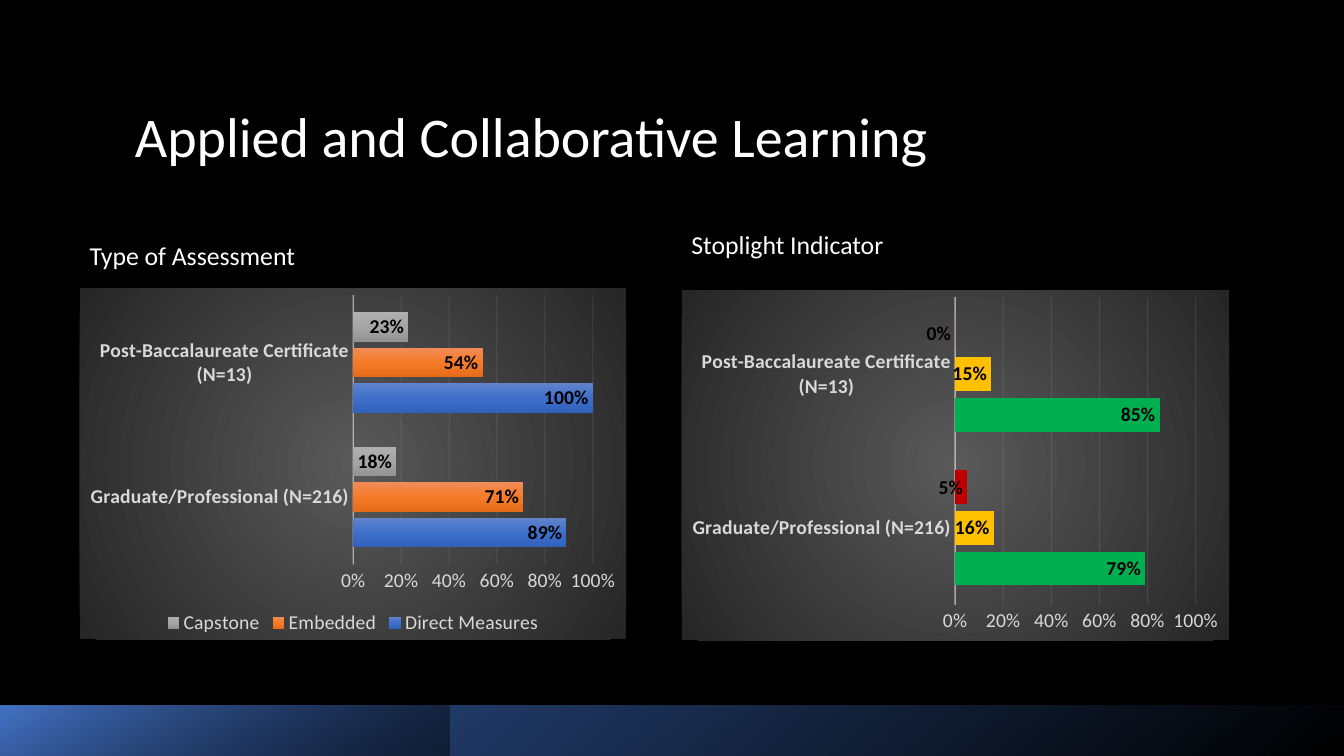
from pptx import Presentation
from pptx.chart.data import CategoryChartData
from pptx.dml.color import RGBColor
from pptx.enum.chart import XL_CHART_TYPE, XL_LABEL_POSITION, XL_LEGEND_POSITION, XL_TICK_MARK
from pptx.enum.shapes import MSO_SHAPE
from pptx.enum.text import MSO_ANCHOR
from pptx.oxml import parse_xml
from pptx.oxml.ns import nsdecls, qn
from pptx.util import Inches, Pt

BAR = XL_CHART_TYPE.BAR_CLUSTERED
INSIDE_END = XL_LABEL_POSITION.INSIDE_END
BOTTOM = XL_LEGEND_POSITION.BOTTOM
NO_TICK = XL_TICK_MARK.NONE
RECT = MSO_SHAPE.RECTANGLE
TOP, MIDDLE = MSO_ANCHOR.TOP, MSO_ANCHOR.MIDDLE

BLACK = RGBColor(0x00, 0x00, 0x00)
WHITE = RGBColor(0xFF, 0xFF, 0xFF)
NAVY = RGBColor(0x2F, 0x55, 0x97)
BLUE = RGBColor(0x44, 0x72, 0xC4)
LABEL_GRAY = RGBColor(0xD9, 0xD9, 0xD9)
LINE_GRAY = RGBColor(0xF2, 0xF2, 0xF2)
PANEL_CENTER = RGBColor(0x59, 0x59, 0x59)
PANEL_EDGE = RGBColor(0x26, 0x26, 0x26)
BLUES = [RGBColor(0x61, 0x83, 0xCB), RGBColor(0x3E, 0x70, 0xCA), RGBColor(0x30, 0x62, 0xBB)]
ORANGES = [RGBColor(0xF1, 0x8C, 0x57), RGBColor(0xF6, 0x7B, 0x28), RGBColor(0xE5, 0x6C, 0x19)]
GRAYS = [RGBColor(0xAF, 0xAF, 0xAF), RGBColor(0xA5, 0xA5, 0xA5), RGBColor(0x93, 0x93, 0x93)]
GREEN = RGBColor(0x00, 0xB0, 0x50)
AMBER = RGBColor(0xFF, 0xC0, 0x00)
RED = RGBColor(0xC0, 0x00, 0x00)
FONT = "Calibri"


def gradient(stops, angle=None):
    """Gradient fill from (position, colour, opacity) stops; radial without an angle."""
    gs = "".join(
        f'<a:gs pos="{pos * 1000}"><a:srgbClr val="{color}">'
        f'<a:alpha val="{opacity * 1000}"/></a:srgbClr></a:gs>'
        for pos, color, opacity in stops)
    if angle is None:
        shade = ('<a:path path="circle"><a:fillToRect l="50000" t="50000" '
                 'r="50000" b="50000"/></a:path>')
    else:
        shade = f'<a:lin ang="{angle * 60000}" scaled="0"/>'
    return parse_xml(f'<a:gradFill {nsdecls("a")} rotWithShape="1">'
                     f'<a:gsLst>{gs}</a:gsLst>{shade}</a:gradFill>')


def style_line(line, element, width, opacity):
    """Colour a chart line and make it partly transparent."""
    line.color.rgb = LINE_GRAY
    line.width = Pt(width)
    color = next(element.iter(qn("a:srgbClr")))
    color.append(parse_xml(f'<a:alpha {nsdecls("a")} val="{opacity * 1000}"/>'))


prs = Presentation()
prs.slide_width, prs.slide_height = Inches(13.33), Inches(7.5)
s = prs.slides.add_slide(prs.slide_layouts[6])
s.background.fill.solid()
s.background.fill.fore_color.rgb = BLACK

# Bottom band with a brighter left part
bands = [
    (13.33, [(0, BLACK, 100), (100, NAVY, 100)], 230),
    (4.46, [(0, BLACK, 46), (99, BLUE, 100)], 240),
]
for width, stops, angle in bands:
    sp = s.shapes.add_shape(RECT, 0, Inches(7), Inches(width), Inches(0.5))
    sp.shadow.inherit = False
    sp.line.fill.background()
    sp.fill.solid()
    solid = sp._element.spPr.find(qn("a:solidFill"))
    solid.getparent().replace(solid, gradient(stops, angle))

# Title and chart headings
texts = [
    ("Applied and Collaborative Learning", 1.24, 0.78, 11.13, 1.2, 40, MIDDLE, 0.9, 0),
    ("Type of Assessment", 0.79, 2.33, 5.77, 4.12, 18.4, TOP, 1.0, 6),
    ("Stoplight Indicator", 6.76, 2.22, 5.8, 4.12, 18.4, TOP, 1.0, 6),
]
for text, left, top, width, height, size, anchor, spacing, after in texts:
    sp = s.shapes.add_textbox(Inches(left), Inches(top), Inches(width), Inches(height))
    tf = sp.text_frame
    tf.word_wrap = True
    tf.vertical_anchor = anchor
    tf.text = text
    p = tf.paragraphs[0]
    p.line_spacing = spacing
    p.space_after = Pt(after)
    r = p.runs[0]
    r.font.name, r.font.size, r.font.color.rgb = FONT, Pt(size), WHITE

# Bar charts: a series colour is a list of shades or a single colour
categories = ["Graduate/Professional (N=216)", "Post-Baccalaureate Certificate (N=13)"]
charts = [
    (0.79, 2.86, 5.42, 3.48, True, [
        ("Direct Measures", (0.89, 1), BLUES),
        ("Embedded", (0.71, 0.54), ORANGES),
        ("Capstone", (0.18, 0.23), GRAYS)]),
    (6.76, 2.88, 5.43, 3.47, False, [
        ("Series 1", (0.79, 0.85), GREEN),
        ("Series 2", (0.16, 0.15), AMBER),
        ("Series 3", (0.05, 0), RED)]),
]
for left, top, width, height, has_legend, series in charts:
    data = CategoryChartData(number_format="0%")
    data.categories = categories
    for name, values, _ in series:
        data.add_series(name, values)
    chart = s.shapes.add_chart(BAR, Inches(left), Inches(top), Inches(width),
                               Inches(height), data).chart
    chart.has_title = False
    chart.font.name, chart.font.size, chart.font.color.rgb = FONT, Pt(10), WHITE

    # Radial panel behind the bars
    panel = parse_xml(f'<c:spPr {nsdecls("c", "a")}><a:ln><a:noFill/></a:ln></c:spPr>')
    panel.insert(0, gradient([(0, PANEL_CENTER, 100), (100, PANEL_EDGE, 100)]))
    chart._chartSpace.find(qn("c:chart")).addnext(panel)

    # Axes
    cat_axis, val_axis = chart.category_axis, chart.value_axis
    style_line(cat_axis.format.line, cat_axis._element, 1, 54)
    val_axis.has_major_gridlines = True
    style_line(val_axis.major_gridlines.format.line,
               val_axis._element.find(qn("c:majorGridlines")), 0.75, 10)
    val_axis.format.line.fill.background()
    val_axis.minimum_scale, val_axis.maximum_scale = 0, 1
    val_axis.major_unit = 0.2
    val_axis.tick_labels.number_format = "0%"
    val_axis.tick_labels.number_format_is_linked = False
    for axis in (cat_axis, val_axis):
        axis.major_tick_mark = axis.minor_tick_mark = NO_TICK
        font = axis.tick_labels.font
        font.name, font.size, font.color.rgb = FONT, Pt(14), LABEL_GRAY
        font.bold = axis is cat_axis

    # Legend
    chart.has_legend = has_legend
    if has_legend:
        chart.legend.position = BOTTOM
        chart.legend.include_in_layout = False
        font = chart.legend.font
        font.name, font.size, font.color.rgb = FONT, Pt(14), LABEL_GRAY

    # Bars and their labels
    plot = chart.plots[0]
    plot.gap_width, plot.overlap = 115, -20
    plot.vary_by_categories = False
    for bars, (_, _, color) in zip(plot.series, series):
        bars.invert_if_negative = False
        fill = bars.format.fill
        fill.solid()
        if isinstance(color, list):
            solid = bars._element.find(qn("c:spPr")).find(qn("a:solidFill"))
            stops = [(50 * i, shade, 100) for i, shade in enumerate(color)]
            solid.getparent().replace(solid, gradient(stops, 90))
        else:
            fill.fore_color.rgb = color
        labels = bars.data_labels
        labels.show_value = True
        labels.position = INSIDE_END
        labels.number_format = "0%"
        labels.number_format_is_linked = False
        font = labels.font
        font.name, font.size, font.bold, font.color.rgb = FONT, Pt(14), True, BLACK

prs.save("out.pptx")
